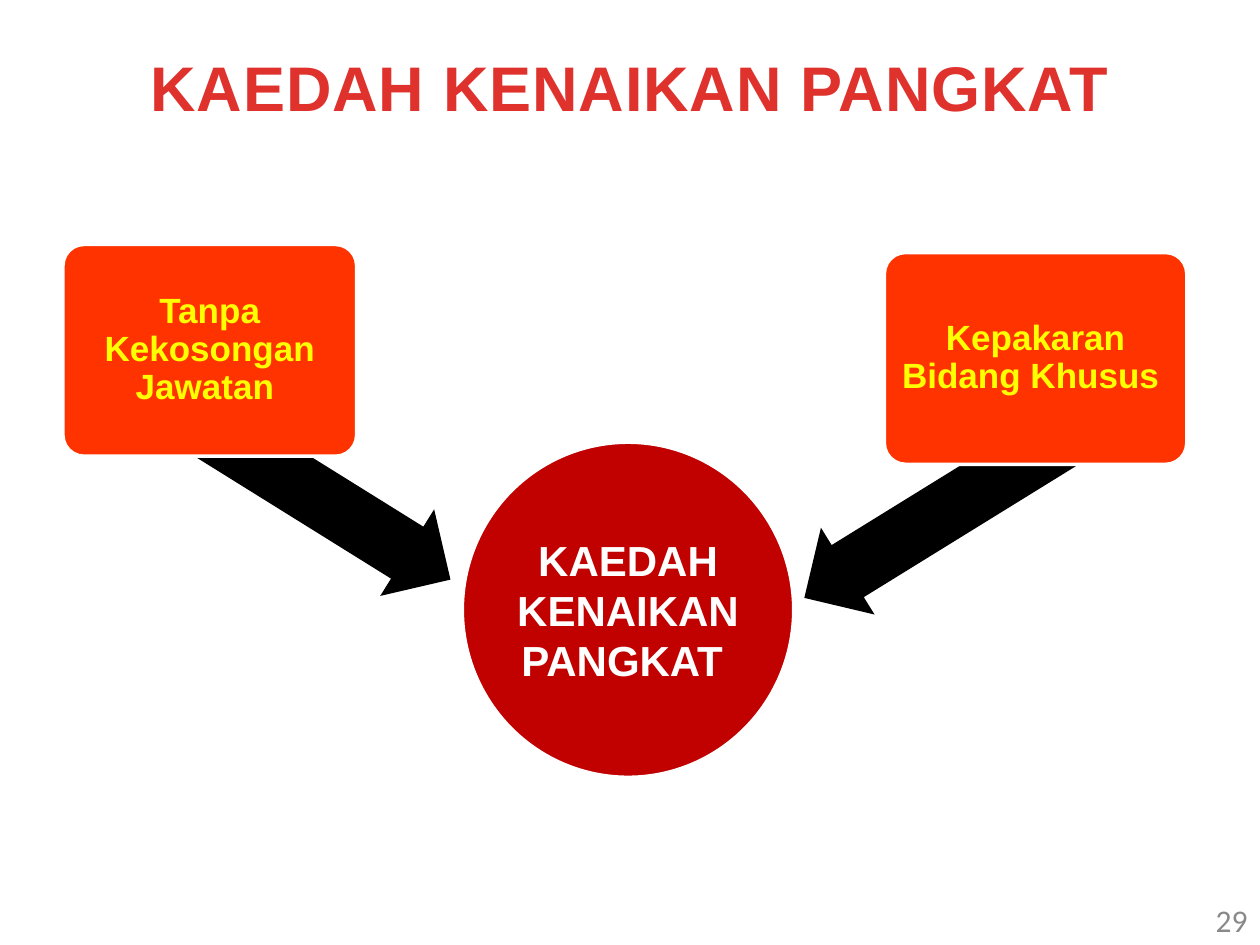
import pptx
import pptx.util
import pptx.dml.color
import pptx.enum.shapes
import pptx.enum.text

Pt = pptx.util.Pt
SHAPE = pptx.enum.shapes.MSO_SHAPE
ALIGN = pptx.enum.text.PP_ALIGN
ANCHOR = pptx.enum.text.MSO_ANCHOR

COLORS = {
    "title": "E0322D",
    "circle": "C10000",
    "box": "FF3300",
    "box_text": "FFFF00",
    "arrow": "000000",
    "white": "FFFFFF",
    "number": "898989",
}


def rgb(name):
    return pptx.dml.color.RGBColor.from_string(COLORS[name])


def write(sp, text, size, color, font="Arial", bold=True, align=ALIGN.CENTER,
          anchor=ANCHOR.MIDDLE, inset=None, line_spacing=None, tracking=None):
    tf = sp.text_frame
    tf.word_wrap = True
    tf.vertical_anchor = anchor
    if inset is not None:
        tf.margin_left = tf.margin_right = Pt(inset)
        tf.margin_top = tf.margin_bottom = Pt(inset)
    p = tf.paragraphs[0]
    p.alignment = align
    if line_spacing:
        p.line_spacing = line_spacing
    r = p.add_run()
    r.text = text
    r.font.name = font
    r.font.size = Pt(size)
    r.font.bold = bold
    r.font.color.rgb = rgb(color)
    if tracking:
        r.font._element.set("spc", str(int(tracking * 100)))


def add_shape(s, kind, box, fill, outlined=True, adjustments=()):
    sp = s.shapes.add_shape(kind, *map(Pt, box))
    sp.shadow.inherit = False
    sp.fill.solid()
    sp.fill.fore_color.rgb = rgb(fill)
    if outlined:
        sp.line.color.rgb = rgb("white")
        sp.line.width = Pt(2)
    else:
        sp.line.fill.background()
    for i, value in enumerate(adjustments):
        sp.adjustments[i] = value
    return sp


def add_arrow(s, box, rotation):
    sp = add_shape(s, SHAPE.LEFT_ARROW, box, "arrow", False, (0.6, 0.5))
    sp.rotation = rotation


def add_method_box(s, box, text):
    sp = add_shape(s, SHAPE.ROUNDED_RECTANGLE, box, "box", adjustments=(0.1,))
    write(sp, text, 20, "box_text", inset=2.9, line_spacing=0.9)


def add_text(s, box, text, size, color, **style):
    write(s.shapes.add_textbox(*map(Pt, box)), text, size, color, **style)


def main():
    prs = pptx.Presentation()
    prs.slide_width, prs.slide_height = Pt(720), Pt(540)
    s = prs.slides.add_slide(prs.slide_layouts[6])

    # Central circle
    circle = add_shape(s, SHAPE.OVAL, (264.2, 252.7, 189.4, 191.5), "circle")
    write(circle, "KAEDAH KENAIKAN PANGKAT ", 24, "white", inset=1.4)

    # Methods, each with its arrow behind the box
    methods = [
        ((95, 255.6, 175.7, 58.3), 211.9,
         (36, 139.7, 167.8, 121), "Tanpa Kekosongan Jawatan "),
        ((441.4, 248.4, 244.1, 58.3), 328.3,
         (505.4, 144.3, 172.8, 121), "Kepakaran Bidang Khusus "),
    ]
    for arrow, rotation, box, text in methods:
        add_arrow(s, arrow, rotation)
        add_method_box(s, box, text)

    # Slide number and title
    add_text(s, (552, 511.2, 168, 28.8), "29", 18, "number",
             font="Calibri", bold=False, align=ALIGN.RIGHT)
    add_text(s, (0, 24, 720, 51), "KAEDAH KENAIKAN PANGKAT", 36, "title",
             anchor=ANCHOR.TOP, tracking=0.5)

    prs.save("out.pptx")


if __name__ == "__main__":
    main()
